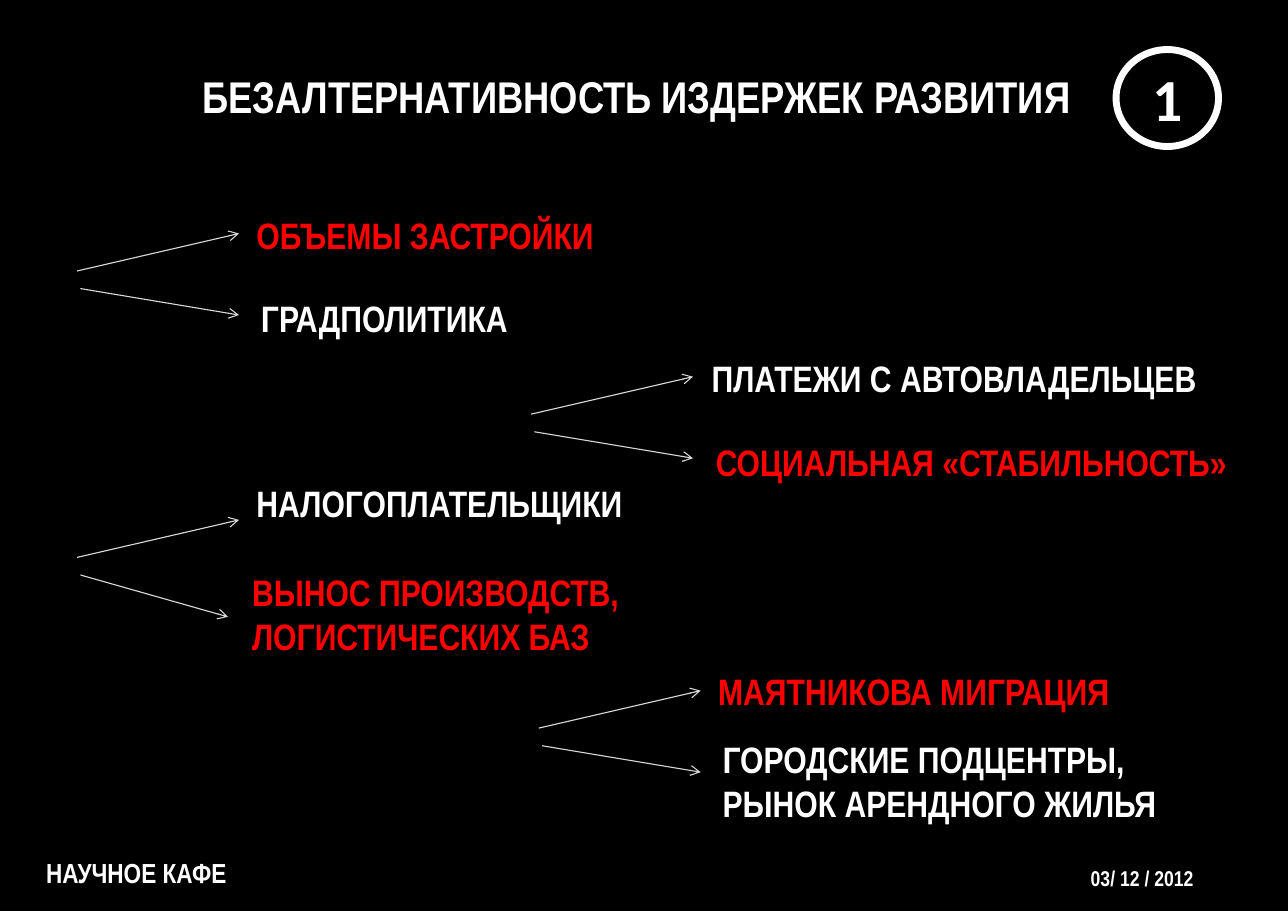
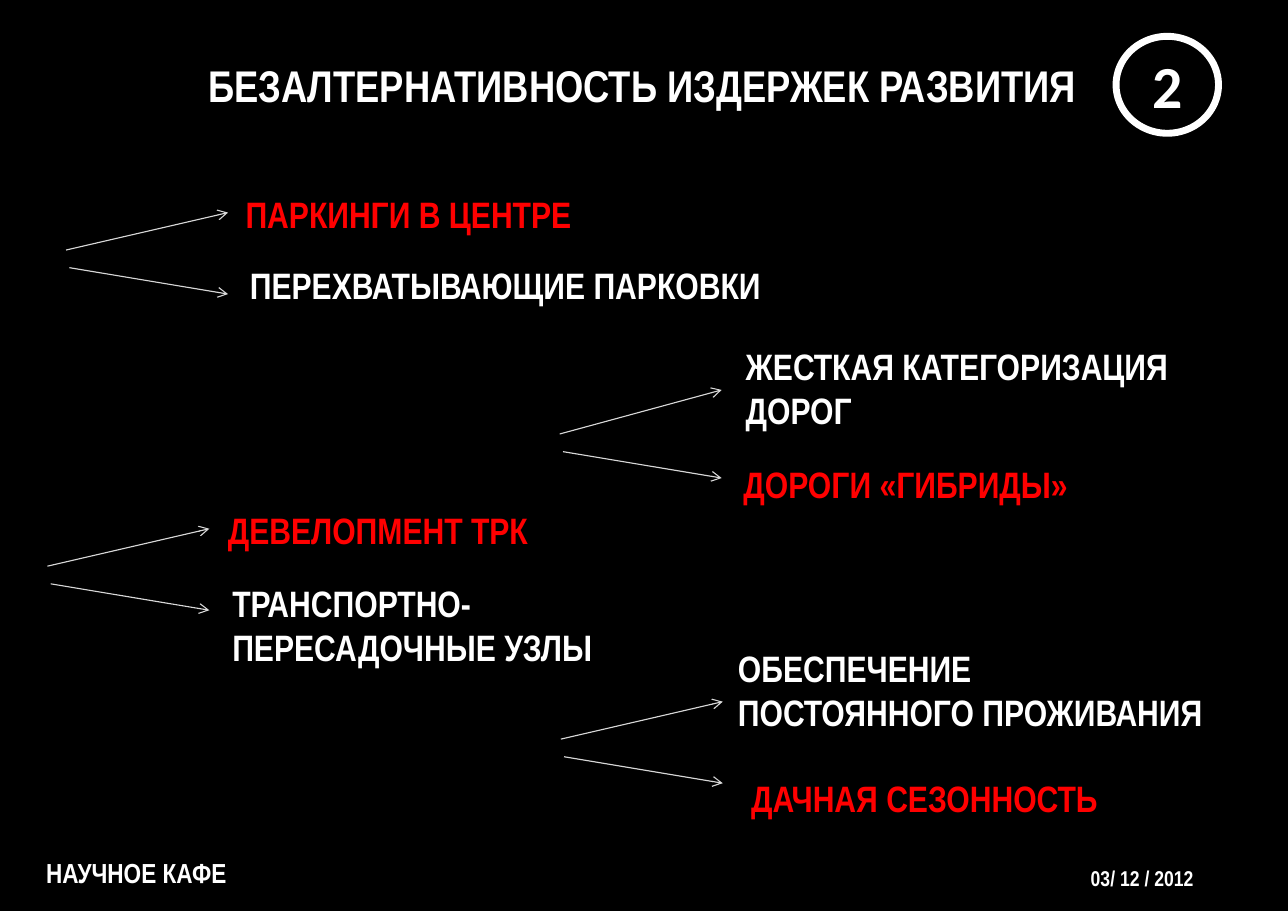
"""Build two black slides of forked arrows that set costs of development against their alternatives."""
from dataclasses import dataclass

from lxml import etree
from pptx import Presentation
from pptx import util as u
from pptx.dml.color import RGBColor
from pptx.enum import shapes, text
from pptx.oxml.ns import qn

BLACK = RGBColor(0x00, 0x00, 0x00)
WHITE = RGBColor(0xFF, 0xFF, 0xFF)
RED = RGBColor(0xFF, 0x00, 0x00)
GREY = RGBColor(0xD8, 0xD8, 0xD8)
NARROW, ROUND = "Arial Narrow", "Calibri"
CELL = u.Inches(0.1)
COLS, ROWS = 116.9, 82.7
TITLE = "БЕЗАЛТЕРНАТИВНОСТЬ ИЗДЕРЖЕК РАЗВИТИЯ"
LABEL_ROWS = {1: 5.0, 2: 9.1}
UP_TIP, DOWN_START, DOWN_TIP = (14.7, -3.4), (0.3, 1.6), (14.7, 4.0)
LEFT, CENTER, JUSTIFY = text.PP_ALIGN.LEFT, text.PP_ALIGN.CENTER, text.PP_ALIGN.JUSTIFY


@dataclass(frozen=True)
class Branch:
    lines: tuple[str, ...]
    color: RGBColor
    dx: float
    dy: float
    width: float
    rows: int = 1
    wrap: bool = False


@dataclass(frozen=True)
class Fork:
    col: float
    row: float
    up: Branch
    down: Branch
    up_tip: tuple[float, float] = UP_TIP
    down_tip: tuple[float, float] = DOWN_TIP


@dataclass(frozen=True)
class Page:
    number: str
    title_col: float
    title_row: float
    circle_row: float
    forks: tuple[Fork, ...]


PAGES = (
    Page("1", 1.8, 5.9, 4.5, (
        Fork(7, 24.6,
             Branch(("ОБЪЕМЫ ЗАСТРОЙКИ",), RED, 15.3, -5.8, 33.3),
             Branch(("ГРАДПОЛИТИКА",), WHITE, 15.7, 1.8, 24.9)),
        Fork(7, 50.6,
             Branch(("НАЛОГОПЛАТЕЛЬЩИКИ",), WHITE, 15.3, -7.4, 38.7, wrap=True),
             Branch(("ВЫНОС ПРОИЗВОДСТВ,", "ЛОГИСТИЧЕСКИХ БАЗ"), RED, 14.9, 0.6, 36.7, 2),
             down_tip=(13.7, 5.4)),
        Fork(48.2, 37.6,
             Branch(("ПЛАТЕЖИ С АВТОВЛАДЕЛЬЦЕВ",), WHITE, 15.4, -5.8, 46.9),
             Branch(("СОЦИАЛЬНАЯ «СТАБИЛЬНОСТЬ»",), RED, 15.8, 1.8, 49.3)),
        Fork(48.9, 66.1,
             Branch(("МАЯТНИКОВА МИГРАЦИЯ",), RED, 15.3, -5.9, 38.4),
             Branch(("ГОРОДСКИЕ ПОДЦЕНТРЫ,", "РЫНОК АРЕНДНОГО ЖИЛЬЯ"), WHITE, 15.7, 0.3, 42.8, 2)),
    )),
    Page("2", 2.3, 4.9, 3.3, (
        Fork(4.3, 51.4,
             Branch(("ДЕВЕЛОПМЕНТ ТРК",), RED, 15.4, -5.8, 29.6),
             Branch(("ТРАНСПОРТНО-", "ПЕРЕСАДОЧНЫЕ УЗЛЫ"), WHITE, 15.8, 0.8, 35.1, 2)),
        Fork(50.9, 67.1,
             Branch(("ОБЕСПЕЧЕНИЕ ПОСТОЯННОГО ПРОЖИВАНИЯ",), WHITE, 15.1, -9, 45.3, 2, True),
             Branch(("ДАЧНАЯ СЕЗОННОСТЬ",), RED, 16.3, 2.8, 34.2)),
        Fork(6, 22.7,
             Branch(("ПАРКИНГИ В ЦЕНТРЕ",), RED, 15.3, -5.8, 31.9),
             Branch(("ПЕРЕХВАТЫВАЮЩИЕ ПАРКОВКИ",), WHITE, 15.7, 0.7, 49.4)),
        Fork(50.8, 39.4,
             Branch(("ЖЕСТКАЯ КАТЕГОРИЗАЦИЯ ДОРОГ",), WHITE, 15.9, -8.7, 48.9, 2, True),
             Branch(("ДОРОГИ «ГИБРИДЫ»",), RED, 15.7, 2, 45.3, wrap=True),
             up_tip=(14.7, -4.0)),
    )),
)


def cells(*counts: float) -> list[int]:
    return [round(n * CELL) for n in counts]


def write(tf, lines: tuple[str, ...], size: float, color: RGBColor = WHITE,
          align=LEFT, font: str = NARROW) -> None:
    for i, line in enumerate(lines):
        p = tf.paragraphs[0] if i == 0 else tf.add_paragraph()
        p.text = line
        p.alignment = align
        p.font.name, p.font.size, p.font.bold = font, u.Pt(size), True
        p.font.color.rgb = color


def add_label(s, box: tuple[float, ...], lines: tuple[str, ...], size: float,
              color: RGBColor = WHITE, wrap: bool = False) -> None:
    tf = s.shapes.add_textbox(*cells(*box)).text_frame
    tf.word_wrap = wrap
    tf.auto_size = text.MSO_AUTO_SIZE.SHAPE_TO_FIT_TEXT
    write(tf, lines, size, color)


def add_band(s, box: tuple[float, ...], line: str, size: float, align) -> None:
    tf = s.shapes.add_textbox(*cells(*box)).text_frame
    tf.word_wrap = True
    tf.vertical_anchor = text.MSO_ANCHOR.MIDDLE
    tf.margin_left = tf.margin_right = u.Inches(0.11)
    tf.margin_top = tf.margin_bottom = u.Inches(0.06)
    write(tf, (line,), size, align=align)


def add_arrow(s, start: tuple[float, float], end: tuple[float, float]) -> None:
    sp = s.shapes.add_connector(shapes.MSO_CONNECTOR.STRAIGHT, *cells(*start, *end))
    sp.line.color.rgb = GREY
    sp.line.width = u.Pt(0.75)
    etree.SubElement(sp.line._get_or_add_ln(), qn("a:tailEnd"), type="arrow")
    etree.SubElement(sp._element.spPr, qn("a:effectLst"))


def add_fork(s, fork: Fork) -> None:
    def at(offset: tuple[float, float]) -> tuple[float, float]:
        return fork.col + offset[0], fork.row + offset[1]

    add_arrow(s, at((0, 0)), at(fork.up_tip))
    add_arrow(s, at(DOWN_START), at(fork.down_tip))
    for b in (fork.up, fork.down):
        box = (*at((b.dx, b.dy)), b.width, LABEL_ROWS[b.rows])
        add_label(s, box, b.lines, 24, b.color, b.wrap)


def add_number(s, number: str, row: float) -> None:
    sp = s.shapes.add_shape(shapes.MSO_SHAPE.OVAL, *cells(101.3, row, 9.3, 8.8))
    sp.shadow.inherit = False
    sp.fill.background()
    sp.line.color.rgb = WHITE
    sp.line.width = u.Pt(4.5)
    sp.text_frame.vertical_anchor = text.MSO_ANCHOR.MIDDLE
    write(sp.text_frame, (number,), 39, align=CENTER, font=ROUND)


def add_page(prs, page: Page) -> None:
    s = prs.slides.add_slide(prs.slide_layouts[6])
    add_band(s, (page.title_col, page.title_row, 112.1, 5.5), TITLE, 29, CENTER)
    for fork in page.forks:
        add_fork(s, fork)
    add_band(s, (97.9, 77.5, 14, 4.4), "03/ 12 / 2012", 14, JUSTIFY)
    add_label(s, (3.2, 77.2, 18.7, 4), ("НАУЧНОЕ КАФЕ",), 18)
    add_number(s, page.number, page.circle_row)


def main() -> None:
    prs = Presentation()
    prs.slide_width, prs.slide_height = cells(COLS, ROWS)
    fill = prs.slide_master.background.fill
    fill.solid()
    fill.fore_color.rgb = BLACK
    for page in PAGES:
        add_page(prs, page)
    prs.save("out.pptx")


if __name__ == "__main__":
    main()
